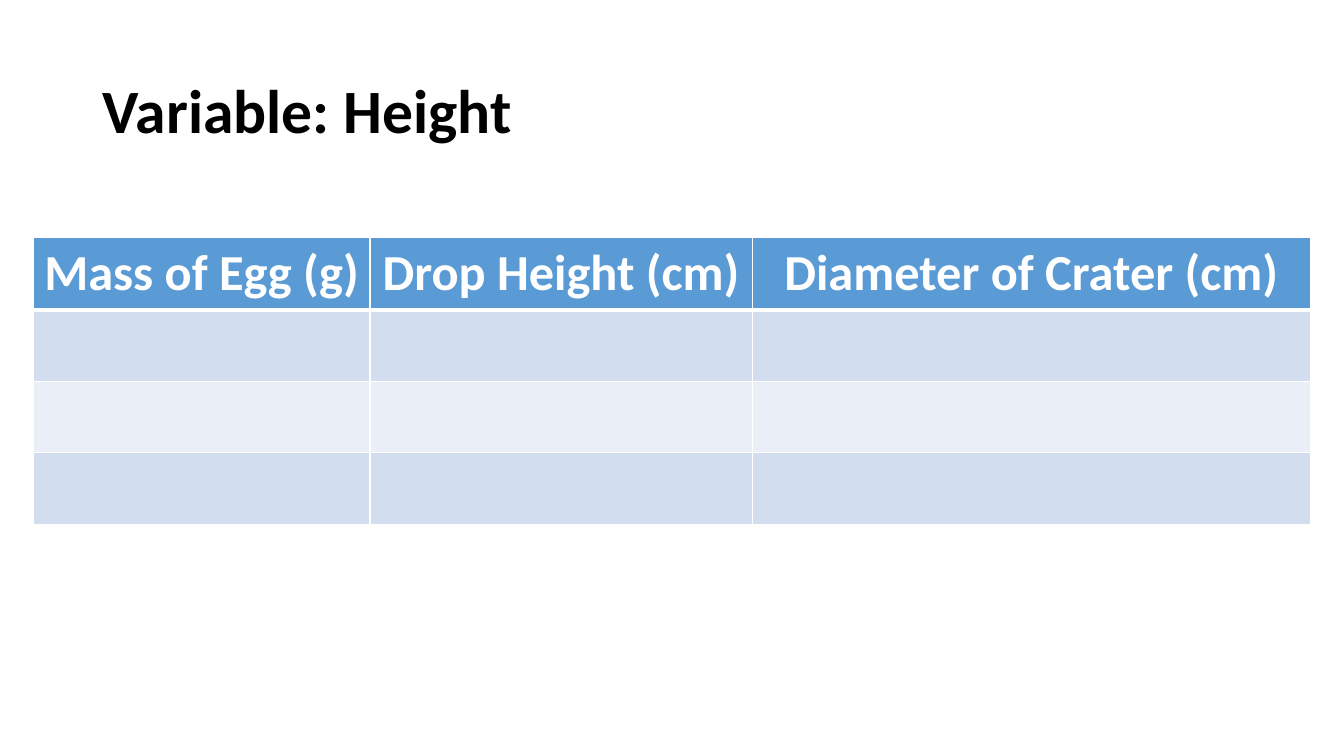
from lxml import etree
from pptx import Presentation
from pptx.dml.color import RGBColor
from pptx.enum.text import MSO_ANCHOR, MSO_AUTO_SIZE, PP_ALIGN
from pptx.oxml.ns import qn
from pptx.util import Emu, Pt

LEFT, CENTER = PP_ALIGN.LEFT, PP_ALIGN.CENTER
MIDDLE = MSO_ANCHOR.MIDDLE
FIXED = MSO_AUTO_SIZE.NONE
PX = 9144

WHITE = "FFFFFF"
BLACK = "000000"
BLUE = "5B9BD5"
BANDS = ["D2DEEF", "EAEFF7"]
HEADS = ["Mass of Egg (g)", "Drop Height (cm)", "Diameter of Crater (cm)"]
WIDTHS = [334, 379, 554]
ROWS = 4
ROW = 71


def px(size):
    return Emu(size * PX)


def color(code):
    return RGBColor.from_string(code)


class Page:
    font = "Calibri"

    def __init__(self, deck):
        self.slide = deck.slides.add_slide(deck.slide_layouts[5])

    def label(self, para, text, size, code, align):
        para.alignment = align
        run = para.add_run()
        run.text = text
        run.font.name = self.font
        run.font.size = Pt(size)
        run.font.bold = True
        run.font.color.rgb = color(code)

    def title(self, text, left, top, width, height):
        shape = self.slide.shapes.title
        shape.left, shape.top = px(left), px(top)
        shape.width, shape.height = px(width), px(height)
        frame = shape.text_frame
        frame.auto_size = FIXED
        frame.word_wrap = True
        frame.vertical_anchor = MIDDLE
        para = frame.paragraphs[0]
        para.line_spacing = 0.9
        self.label(para, text, 44, BLACK, LEFT)

    def edge(self, cell, side, width):
        props = cell._tc.get_or_add_tcPr()
        line = etree.SubElement(props, qn(f"a:ln{side}"), w=str(Pt(width)))
        fill = etree.SubElement(line, qn("a:solidFill"))
        etree.SubElement(fill, qn("a:srgbClr"), val=WHITE)

    def cell(self, cell, fill, top, bottom):
        for side, width in zip("LRTB", (1, 1, top, bottom)):
            self.edge(cell, side, width)
        cell.fill.solid()
        cell.fill.fore_color.rgb = color(fill)

    def table(self, left, top):
        frame = self.slide.shapes.add_table(
            ROWS, len(HEADS), px(left), px(top), px(sum(WIDTHS)), px(ROWS * ROW))
        table = frame.table
        for col, width in zip(table.columns, WIDTHS):
            col.width = px(width)
        for i, row in enumerate(table.rows):
            row.height = px(ROW)
            fill = BANDS[(i - 1) % 2] if i else BLUE
            for cell in row.cells:
                self.cell(cell, fill, 3 if i == 1 else 1, 1 if i else 3)
        for cell, text in zip(table.rows[0].cells, HEADS):
            self.label(cell.text_frame.paragraphs[0], text, 36, WHITE, CENTER)


def main():
    deck = Presentation()
    deck.slide_width, deck.slide_height = px(1333), px(750)
    page = Page(deck)
    page.title("Variable: Height", 92, 40, 1150, 145)
    page.table(33, 236)
    deck.save("out.pptx")


if __name__ == "__main__":
    main()
